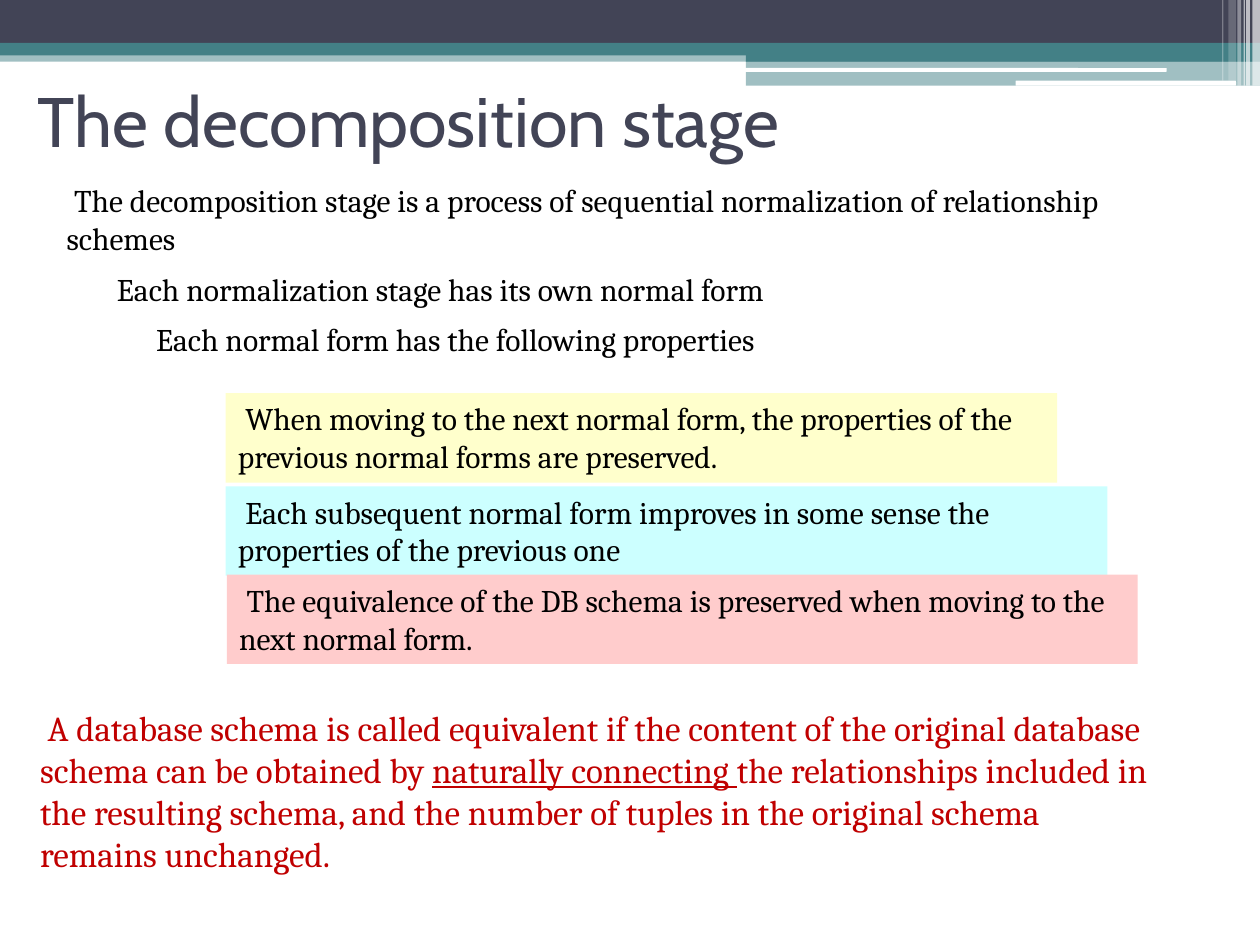
import pptx
import pptx.dml.color
import pptx.enum.shapes
import pptx.enum.text
import pptx.oxml
import pptx.oxml.ns
import pptx.util
from pptx.util import Inches

COLORS = {
    "navy": "424456", "teal": "438086", "white": "FFFFFF", "black": "000000",
    "red": "C00000", "cyan": "CCFFFF", "yellow": "FFFFCC", "pink": "FFCCCC",
}
SHAPE = pptx.enum.shapes.MSO_SHAPE
ANCHOR = pptx.enum.text.MSO_ANCHOR

# left, top, width, height, color, opacity in percent
BANDS = [
    (0, 0.4, 10, 0.09, "teal", 50),
    (0, 0, 10, 0.34, "navy", 100),
    (0, 0.34, 10, 0.1, "teal", 100),
    (5.92, 0.39, 4.08, 0.1, "teal", 100),
    (5.92, 0.48, 4.08, 0.2, "teal", 50),
]
BARS = [(5.91, 0.54, 3.35, 0.03), (8.06, 0.64, 1.75, 0.04)]
# left, width, height, opacity in percent
STRIPES = [
    (9.94, 0.06, 0.68, 65), (9.89, 0.03, 0.68, 65), (9.87, 0.01, 0.68, 60),
    (9.82, 0.03, 0.68, 40), (9.75, 0.06, 0.64, 20), (9.7, 0.01, 0.64, 30),
]
# left, top, width, height, first-line indent, text
STEPS = [
    (0.43, 1.39, 8.58, 0.71, 0.06, "The decomposition stage is a process of "
     "sequential normalization of relationship schemes"),
    (0.77, 2.09, 8.11, 0.4, 0.06,
     "Each normalization stage has its own normal form"),
    (1.14, 2.49, 6.29, 0.4, 0,
     "Each normal form has the following properties"),
]
# left, top, width, color, text
RULES = [
    (1.79, 3.86, 7, "cyan", "Each subsequent normal form improves in some "
     "sense the properties of the previous one"),
    (1.79, 3.12, 6.6, "yellow", "When moving to the next normal form, the "
     "properties of the previous normal forms are preserved."),
    (1.8, 4.56, 7.23, "pink", "The equivalence of the DB schema is preserved "
     "when moving to the next normal form."),
]
CLAIM = [
    ("A database schema is called equivalent if the content of the original "
     "database schema can be obtained by ", False),
    ("naturally connecting ", True),
    ("the relationships included in the resulting schema, and the number of "
     "tuples in the original schema remains unchanged.", False),
]


def rgb(name):
    return pptx.dml.color.RGBColor.from_string(COLORS[name])


def add_block(slide, box, color, alpha=100, kind=SHAPE.RECTANGLE):
    """Add a borderless filled shape; alpha is its opacity in percent."""
    shape = slide.shapes.add_shape(kind, *map(Inches, box))
    shape.shadow.inherit = False
    shape.line.fill.background()
    shape.fill.solid()
    shape.fill.fore_color.rgb = rgb(color)
    if alpha < 100:
        tint = shape.fill._xPr.find(".//" + pptx.oxml.ns.qn("a:srgbClr"))
        node = pptx.oxml.parse_xml(
            f'<a:alpha {pptx.oxml.ns.nsdecls("a")} val="{alpha * 1000}"/>')
        tint.append(node)
    return shape


def add_label(slide, box):
    return slide.shapes.add_textbox(*map(Inches, box))


def put_text(shape, runs, size=18, font="Cambria", color="black",
             indent=0.06, anchor=ANCHOR.TOP):
    """Write one paragraph from a string or from (text, underline) pairs."""
    if isinstance(runs, str):
        runs = [(runs, False)]
    frame = shape.text_frame
    frame.word_wrap = True
    frame.vertical_anchor = anchor
    para = frame.paragraphs[0]
    para.alignment = pptx.enum.text.PP_ALIGN.LEFT
    if indent:
        para._p.get_or_add_pPr().set("indent", str(Inches(indent)))
    for text, under in runs:
        run = para.add_run()
        run.text = text
        run.font.size = pptx.util.Pt(size)
        run.font.name = font
        run.font.color.rgb = rgb(color)
        if under:
            run.font.underline = True


def add_header(slide):
    for *box, color, alpha in BANDS:
        add_block(slide, box, color, alpha)
    for box in BARS:
        add_block(slide, box, "white", kind=SHAPE.ROUNDED_RECTANGLE)
    for left, width, height, alpha in STRIPES:
        add_block(slide, (left, 0, width, height), "white", alpha)


def main():
    deck = pptx.Presentation()
    deck.slide_width, deck.slide_height = Inches(10), Inches(7.5)
    slide = deck.slides.add_slide(deck.slide_layouts[6])
    add_header(slide)
    put_text(add_label(slide, (0.2, 0.36, 9, 1.17)),
             "The decomposition stage", size=40, font="Cabin", color="navy",
             indent=0, anchor=ANCHOR.MIDDLE)
    for *box, indent, text in STEPS:
        put_text(add_label(slide, box), text, indent=indent)
    for *spot, color, text in RULES:
        put_text(add_block(slide, (*spot, 0.71), color), text)
    put_text(add_label(slide, (0.22, 5.56, 9, 1.45)), CLAIM, size=20,
             color="red")
    deck.save("out.pptx")


if __name__ == "__main__":
    main()
